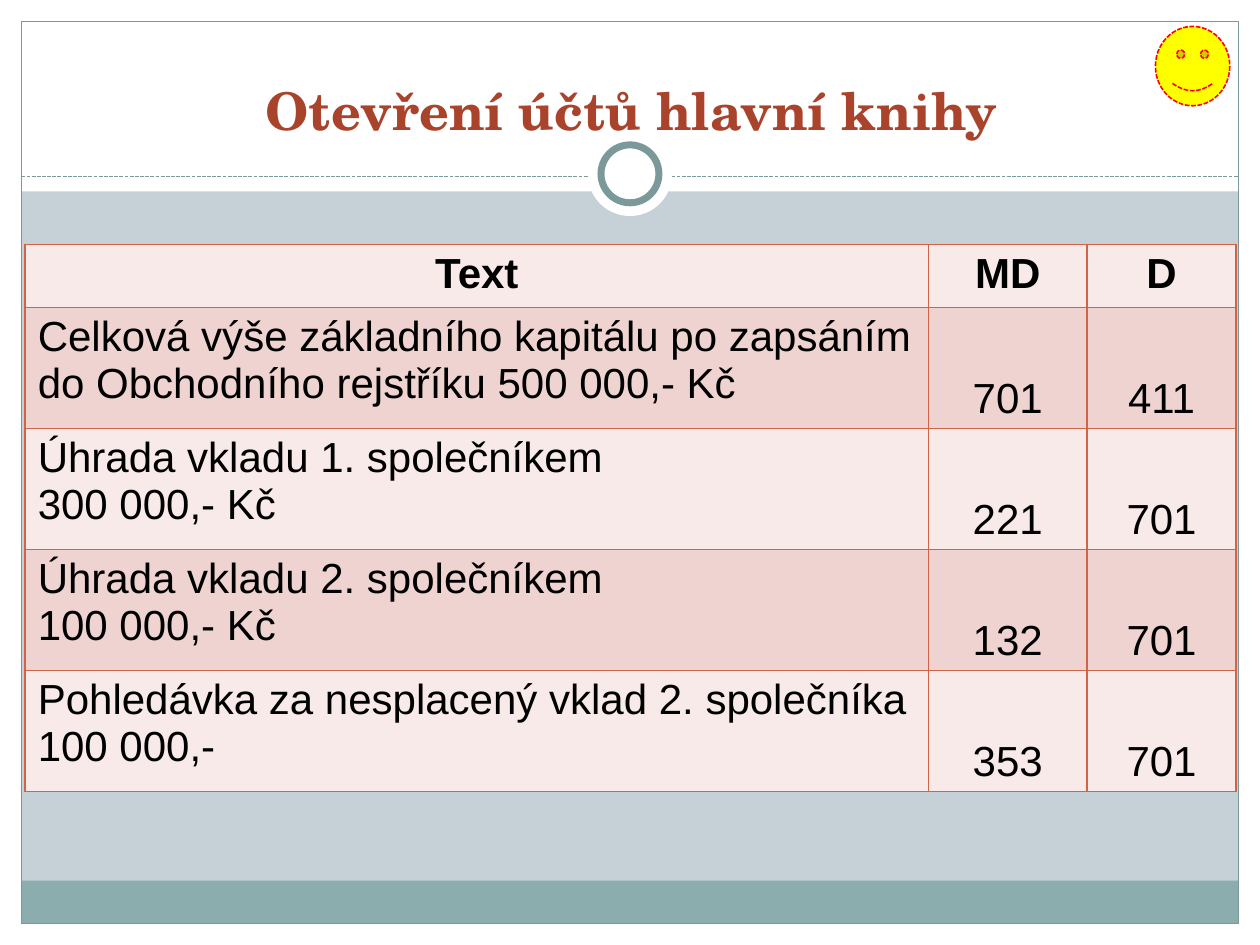
from lxml import etree
from pptx import Presentation
from pptx.dml.color import RGBColor
from pptx.enum.dml import MSO_LINE
from pptx.enum.shapes import MSO_CONNECTOR, MSO_SHAPE
from pptx.enum.text import MSO_ANCHOR, PP_ALIGN
from pptx.oxml.ns import qn
from pptx.util import Inches, Pt

WIDTH, HEIGHT = 10, 7.5
MARGIN = 0.17
HEADER_HEIGHT = 1.52
RULE_Y = 1.4
WHITE, TEAL, SAGE, RUST = "FFFFFF", "7C999A", "8CADAE", "D16349"
BANDS = ("F7EAE9", "EED3D0")

HEADINGS = ("Text", "MD", "D")
ENTRIES = (
    (("Celková výše základního kapitálu po zapsáním do Obchodního rejstříku 500 000,- Kč",),
     "701", "411"),
    (("Úhrada vkladu 1. společníkem", "300 000,- Kč"), "221", "701"),
    (("Úhrada vkladu 2. společníkem", "100 000,- Kč"), "132", "701"),
    (("Pohledávka za nesplacený vklad 2. společníka", "100 000,-"), "353", "701"),
)


def color(hex_code):
    return RGBColor.from_string(hex_code)


def inches(box):
    return [Inches(length) for length in box]


def add_figure(slide, kind, box, fill=None, line=None, weight=0.75):
    figure = slide.shapes.add_shape(kind, *inches(box))
    figure.shadow.inherit = False
    if fill:
        figure.fill.solid()
        figure.fill.fore_color.rgb = color(fill)
    else:
        figure.fill.background()
    if line:
        figure.line.color.rgb = color(line)
        figure.line.width = Pt(weight)
    else:
        figure.line.fill.background()
    return figure


def add_run(paragraph, text, size, font, hex_code, bold=False):
    run = paragraph.add_run()
    run.text = text
    run.font.size = Pt(size)
    run.font.name = font
    run.font.bold = bold
    run.font.color.rgb = color(hex_code)


def draw_frame(slide, box):
    """White surround, footer band and outline around the given box."""
    left, top, width, height = box
    right, bottom = left + width, top + height
    for surround in (
        (0, bottom, WIDTH, HEIGHT - bottom),
        (0, 0, WIDTH, HEADER_HEIGHT),
        (0, 0, left, HEIGHT),
        (right, 0, WIDTH - right, HEIGHT),
    ):
        add_figure(slide, MSO_SHAPE.RECTANGLE, surround, WHITE)
    footer_height = 0.34
    add_figure(slide, MSO_SHAPE.RECTANGLE,
               (left, bottom - footer_height, width, footer_height), SAGE)
    add_figure(slide, MSO_SHAPE.RECTANGLE, box, line=TEAL)


def draw_divider(slide, left, right, y):
    """Dashed rule with a ring at its centre."""
    rule = slide.shapes.add_connector(
        MSO_CONNECTOR.STRAIGHT, *inches((left, y, right, y)))
    rule.line.color.rgb = color(TEAL)
    rule.line.width = Pt(0.75)
    rule.line.dash_style = MSO_LINE.SQUARE_DOT
    etree.SubElement(rule._element.spPr, qn("a:effectLst"))
    center_x, center_y = (left + right) / 2, y - 0.02
    for diameter, outline in ((0.67, None), (0.46, TEAL)):
        add_figure(slide, MSO_SHAPE.OVAL,
                   (center_x - diameter / 2, center_y - diameter / 2, diameter, diameter),
                   WHITE, outline, 4)


def draw_title(slide, box):
    frame = slide.shapes.add_textbox(*inches(box)).text_frame
    frame.word_wrap = True
    frame.vertical_anchor = MSO_ANCHOR.BOTTOM
    frame.margin_bottom = Inches(0.5)
    heading = frame.paragraphs[0]
    heading.alignment = PP_ALIGN.CENTER
    add_run(heading, "Otevření účtů hlavní knihy", 29.7, "TeX Gyre Schola", "A9432B", True)


def set_borders(cell, hex_code, weight):
    properties = cell._tc.get_or_add_tcPr()
    for position, side in enumerate(("lnL", "lnR", "lnT", "lnB")):
        border = etree.Element(qn(f"a:{side}"), w=str(Pt(weight)))
        fill = etree.SubElement(border, qn("a:solidFill"))
        etree.SubElement(fill, qn("a:srgbClr"), val=hex_code)
        properties.insert(position, border)


def fill_cell(cell, lines, band, centered, bold, anchor):
    cell.fill.solid()
    cell.fill.fore_color.rgb = color(band)
    set_borders(cell, RUST, 1)
    cell.vertical_anchor = anchor
    frame = cell.text_frame
    for index, line in enumerate(lines):
        paragraph = frame.add_paragraph() if index else frame.paragraphs[0]
        paragraph.alignment = PP_ALIGN.CENTER if centered else PP_ALIGN.LEFT
        add_run(paragraph, line, 24, "Arial", "000000", bold)


def draw_ledger(slide, box):
    """Table of opening entries with debit and credit accounts."""
    column_shares = (0.746, 0.131, 0.123)
    heading_height = 0.47
    table = slide.shapes.add_table(
        len(ENTRIES) + 1, len(HEADINGS), *inches(box)).table
    for column, share in zip(table.columns, column_shares):
        column.width = Inches(box[2] * share)
    entry_height = (box[3] - heading_height) / len(ENTRIES)
    for index, row in enumerate(table.rows):
        row.height = Inches(entry_height if index else heading_height)

    for column, heading in enumerate(HEADINGS):
        fill_cell(table.cell(0, column), (heading,), BANDS[0], True, True, MSO_ANCHOR.TOP)
    for row, (description, debit, credit) in enumerate(ENTRIES, start=1):
        band = BANDS[row % 2]
        fill_cell(table.cell(row, 0), description, band, False, False, MSO_ANCHOR.TOP)
        for column, account in enumerate((debit, credit), start=1):
            fill_cell(table.cell(row, column), (account,), band, True, False,
                      MSO_ANCHOR.BOTTOM)


def draw_smiley(slide, box):
    smiley = add_figure(slide, MSO_SHAPE.SMILEY_FACE, box, "FFFF00", "FF0000", 0.9)
    smiley.line.dash_style = MSO_LINE.SQUARE_DOT
    smiley.adjustments[0] = 0.047


def main():
    presentation = Presentation()
    presentation.slide_width = Inches(WIDTH)
    presentation.slide_height = Inches(HEIGHT)
    slide = presentation.slides.add_slide(presentation.slide_layouts[6])
    slide.background.fill.solid()
    slide.background.fill.fore_color.rgb = color("C5D1D7")

    draw_frame(slide, (MARGIN, MARGIN, WIDTH - 2 * MARGIN, HEIGHT - 2 * MARGIN))
    draw_divider(slide, MARGIN, WIDTH - MARGIN, RULE_Y)
    draw_title(slide, (0.35, 0.52, 9.33, 1.1))
    draw_ledger(slide, (0.2, 1.94, 9.61, 4.31))
    draw_smiley(slide, (9.17, 0.21, 0.59, 0.63))
    presentation.save("out.pptx")


if __name__ == "__main__":
    main()
